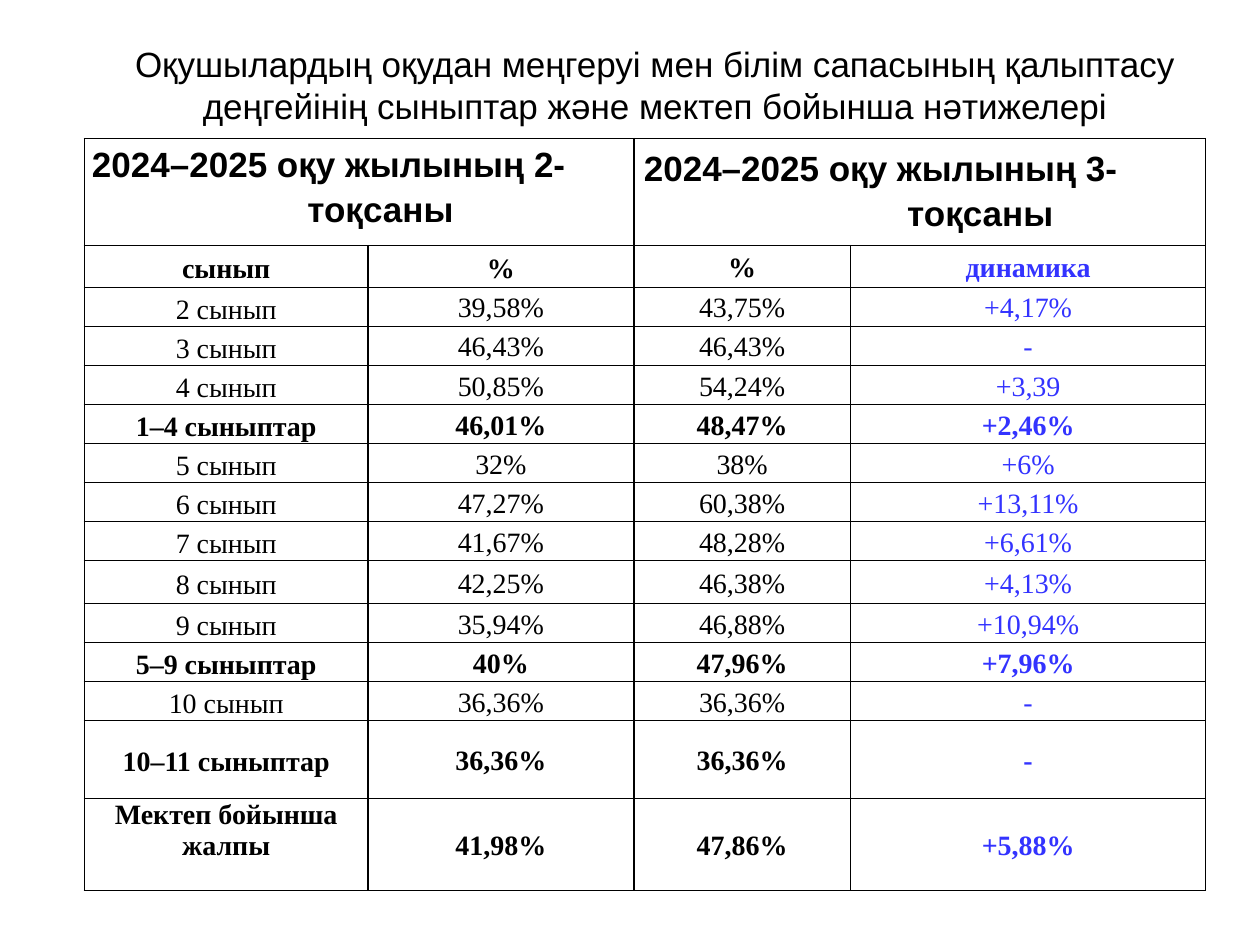
from lxml import etree
from pptx import Presentation
from pptx import util as u
from pptx.dml.color import RGBColor
from pptx.enum import text
from pptx.oxml import ns

BLACK = RGBColor(0x00, 0x00, 0x00)
BLUE = RGBColor(0x33, 0x33, 0xFF)

TITLE = ("Оқушылардың оқудан меңгеруі мен білім сапасының қалыптасу "
         "деңгейінің сыныптар және мектеп бойынша нәтижелері")
COLUMN_WIDTHS = (2.25, 2.11, 1.72, 2.82)
QUARTER_HEIGHT = 0.85
# Column, heading, hanging indent, cell margins (left, top, right, bottom)
QUARTERS = (
    (0, "2024–2025 оқу жылының 2-тоқсаны", 1.71, (0.06, 0.01, 0.06, 0)),
    (2, "2024–2025 оқу жылының 3-тоқсаны", 2.09, (0.08, 0.04, 0.08, 0.04)),
)
# Row height, bold, texts
ROWS = (
    (0.33, True, ("сынып", "%", "%", "динамика")),
    (0.31, False, ("2 сынып", "39,58%", "43,75%", "+4,17%")),
    (0.31, False, ("3 сынып", "46,43%", "46,43%", "-")),
    (0.31, False, ("4 сынып", "50,85%", "54,24%", "+3,39")),
    (0.31, True, ("1–4 сыныптар", "46,01%", "48,47%", "+2,46%")),
    (0.31, False, ("5 сынып", "32%", "38%", "+6%")),
    (0.31, False, ("6 сынып", "47,27%", "60,38%", "+13,11%")),
    (0.31, False, ("7 сынып", "41,67%", "48,28%", "+6,61%")),
    (0.34, False, ("8 сынып", "42,25%", "46,38%", "+4,13%")),
    (0.31, False, ("9 сынып", "35,94%", "46,88%", "+10,94%")),
    (0.31, True, ("5–9 сыныптар", "40%", "47,96%", "+7,96%")),
    (0.31, False, ("10 сынып", "36,36%", "36,36%", "-")),
    (0.62, True, ("10–11 сыныптар", "36,36%", "36,36%", "-")),
    (0.73, True, ("Мектеп бойынша жалпы", "41,98%", "47,86%", "+5,88%")),
)


def apply_format(target, values):
    for name, value in values.items():
        setattr(target, name, value)


def write_paragraph(frame, content, color, font_format, paragraph_format):
    paragraph = frame.paragraphs[0]
    paragraph.text = content
    apply_format(paragraph, paragraph_format)
    apply_format(paragraph.font, font_format)
    paragraph.font.color.rgb = color
    return paragraph


def add_borders(cell):
    properties = cell._tc.get_or_add_tcPr()
    for position, side in enumerate(("lnL", "lnR", "lnT", "lnB")):
        line = etree.Element(ns.qn(f"a:{side}"), w=str(u.Pt(1)))
        fill = etree.SubElement(line, ns.qn("a:solidFill"))
        etree.SubElement(fill, ns.qn("a:srgbClr"), val=str(BLACK))
        properties.insert(position, line)


def format_cell(cell, margins, anchor):
    names = ("margin_left", "margin_top", "margin_right", "margin_bottom")
    apply_format(cell, {name: u.Inches(margin)
                        for name, margin in zip(names, margins)})
    cell.vertical_anchor = anchor


def add_title(slide):
    title = slide.shapes.title
    apply_format(title, {"left": u.Inches(0.67), "top": u.Inches(0.29),
                         "width": u.Inches(9.06), "height": u.Inches(1.11)})
    apply_format(title.text_frame, {
        "word_wrap": True, "vertical_anchor": text.MSO_ANCHOR.TOP,
        "auto_size": text.MSO_AUTO_SIZE.NONE})
    write_paragraph(title.text_frame, TITLE, BLACK,
                    {"name": "Arial", "size": u.Pt(20), "bold": False},
                    {"alignment": text.PP_ALIGN.CENTER})


def fill_quarter(table, column, heading, indent, margins):
    cell = table.cell(0, column)
    cell.merge(table.cell(0, column + 1))
    format_cell(cell, margins, text.MSO_ANCHOR.TOP)
    paragraph = write_paragraph(
        cell.text_frame, heading, BLACK,
        {"name": "Arial", "size": u.Pt(20), "bold": True},
        {"alignment": text.PP_ALIGN.LEFT, "line_spacing": 1.15,
         "space_after": u.Pt(8)})
    # The hanging indent moves the wrapped quarter name to the right
    properties = paragraph._p.get_or_add_pPr()
    properties.set("marL", str(u.Inches(indent)))
    properties.set("indent", str(-u.Inches(indent)))


def fill_row(table, row, bold, contents):
    is_header = row == 1
    is_total = row == len(ROWS)
    for column, content in enumerate(contents):
        is_label = column == 0
        cell = table.cell(row, column)
        side = 0.06 if is_label or is_header else 0.01
        anchor = (text.MSO_ANCHOR.TOP if is_label and is_total
                  else text.MSO_ANCHOR.MIDDLE)
        format_cell(cell, (side, 0.01, side, 0), anchor)
        spacing = 1.15 if is_label or (is_header and column == 1) else 1.07
        if is_label and is_total:
            spacing = 1.0
        has_space = is_header or (is_label and bold)
        write_paragraph(
            cell.text_frame, content, BLUE if column == 3 else BLACK,
            {"name": "Times New Roman", "size": u.Pt(16), "bold": bold},
            {"alignment": text.PP_ALIGN.CENTER, "line_spacing": spacing,
             "space_after": u.Pt(8 if has_space else 0)})


def add_results_table(slide):
    heights = [QUARTER_HEIGHT] + [height for height, _, _ in ROWS]
    table = slide.shapes.add_table(
        len(heights), len(COLUMN_WIDTHS), u.Inches(0.67), u.Inches(1.1),
        u.Inches(sum(COLUMN_WIDTHS)), u.Inches(sum(heights))).table
    apply_format(table, {"first_row": False, "horz_banding": False})
    for column, width in zip(table.columns, COLUMN_WIDTHS):
        column.width = u.Inches(width)
    for row, height in zip(table.rows, heights):
        row.height = u.Inches(height)
    for cell in table.iter_cells():
        cell.fill.background()
        add_borders(cell)
    for quarter in QUARTERS:
        fill_quarter(table, *quarter)
    for row, (_, bold, contents) in enumerate(ROWS, start=1):
        fill_row(table, row, bold, contents)


def main():
    presentation = Presentation()
    presentation.slide_width = u.Inches(10)
    presentation.slide_height = u.Inches(7.5)
    slide = presentation.slides.add_slide(presentation.slide_layouts[5])
    add_title(slide)
    add_results_table(slide)
    presentation.save("out.pptx")


if __name__ == "__main__":
    main()
